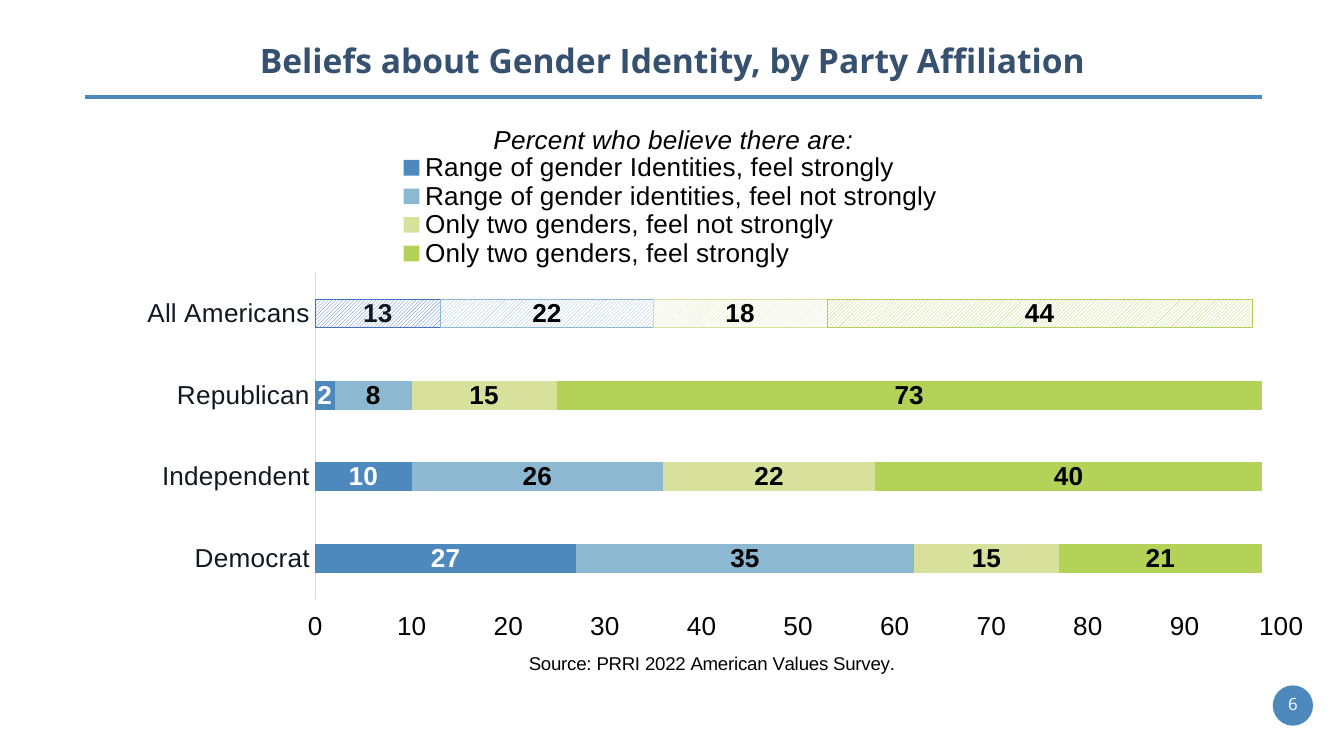
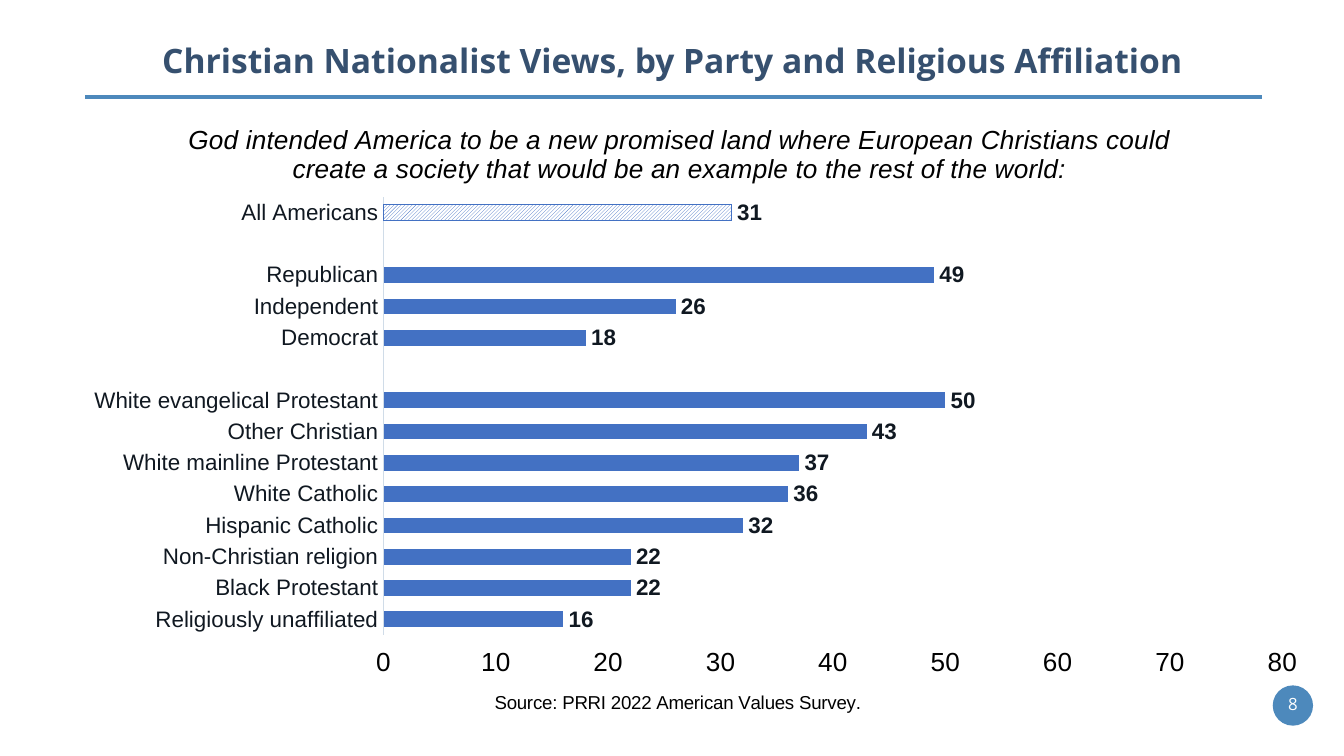
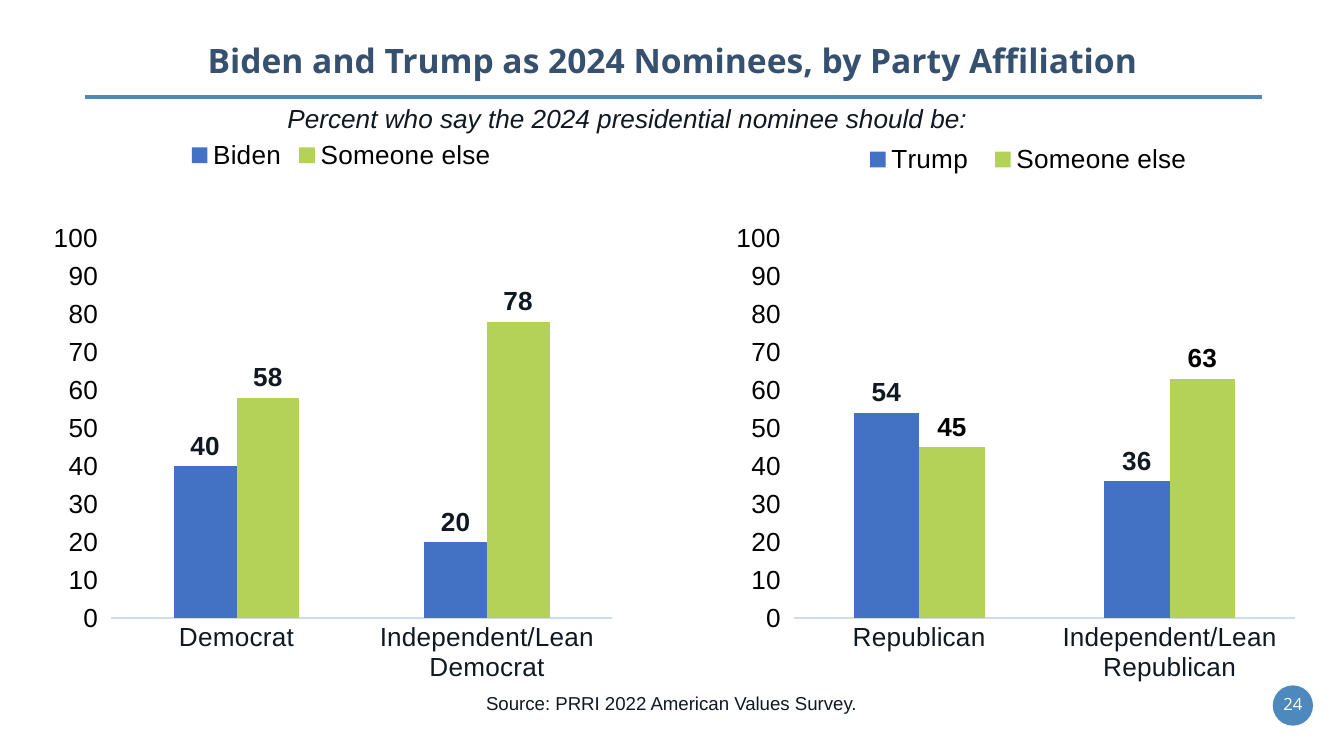
from pptx import Presentation
from pptx.chart.data import CategoryChartData
from pptx.dml.color import RGBColor
from pptx.enum.chart import (XL_CHART_TYPE, XL_LABEL_POSITION, XL_LEGEND_POSITION,
                             XL_TICK_LABEL_POSITION, XL_TICK_MARK)
from pptx.enum.dml import MSO_PATTERN
from pptx.enum.shapes import MSO_CONNECTOR, MSO_SHAPE
from pptx.enum.text import MSO_ANCHOR, MSO_AUTO_SIZE, PP_ALIGN
from pptx.oxml import parse_xml
from pptx.oxml.ns import nsdecls
from pptx.util import Inches, Pt

# Shared colours, fonts and wording
NAVY = RGBColor(0x36, 0x50, 0x6F)
STEEL = RGBColor(0x4D, 0x89, 0xBC)
SKY = RGBColor(0x8C, 0xB8, 0xD2)
ROYAL = RGBColor(0x43, 0x71, 0xC3)
PALE_LIME = RGBColor(0xD8, 0xE1, 0x9C)
LIME = RGBColor(0xB3, 0xD2, 0x57)
AXIS_GREY = RGBColor(0xD0, 0xDC, 0xE8)
INK = RGBColor(0x10, 0x18, 0x21)
BLACK = RGBColor(0, 0, 0)
WHITE = RGBColor(0xFF, 0xFF, 0xFF)
HEAD_FONT = "Open Sans"
BODY_FONT = "Arial"
SOURCE = "Source: PRRI 2022 American Values Survey."


def set_attrs(obj, values):
    for name, value in values.items():
        setattr(obj, name, value)


def set_font(font, size, color, **extra):
    set_attrs(font, {"name": BODY_FONT, "size": Pt(size), "bold": False, **extra})
    font.color.rgb = color


# Slide frame and text
def add_text(s, box, text, size, color, align=PP_ALIGN.CENTER, frame=None, **font):
    sp = s.shapes.add_textbox(*map(Inches, box))
    tf = sp.text_frame
    set_attrs(tf, {"word_wrap": True, **(frame or {})})
    p = tf.paragraphs[0]
    p.alignment = align
    r = p.add_run()
    r.text = text
    set_font(r.font, size, color, **font)


def add_frame(prs, title, number):
    """Add a slide with its title, rule and page badge."""
    s = prs.slides.add_slide(prs.slide_layouts[6])
    rule = s.shapes.add_connector(MSO_CONNECTOR.STRAIGHT, Inches(9.39), Inches(0.72),
                                  Inches(0.63), Inches(0.72))
    rule.line.color.rgb = STEEL
    rule.line.width = Pt(2)
    rule.element.spPr.append(parse_xml(f"<a:effectLst {nsdecls('a')}/>"))

    badge = s.shapes.add_shape(MSO_SHAPE.ROUNDED_RECTANGLE, Inches(9.47), Inches(5.1),
                               Inches(0.3), Inches(0.3))
    badge.adjustments[0] = 0.5
    badge.shadow.inherit = False
    badge.fill.solid()
    badge.fill.fore_color.rgb = STEEL
    badge.line.fill.background()

    middle = {"vertical_anchor": MSO_ANCHOR.MIDDLE, "margin_left": 0, "margin_right": 0}
    add_text(s, (9.54, 5.12, 0.16, 0.24), str(number), 9, WHITE, name=HEAD_FONT,
             frame={**middle, "word_wrap": False, "margin_top": 0, "margin_bottom": 0})
    add_text(s, (0.17, 0.27, 9.67, 0.35), title, 18, NAVY, name=HEAD_FONT, bold=True,
             frame={**middle, "margin_top": Inches(0.04), "margin_bottom": Inches(0.04)})
    return s


# Charts
def place(chart, xpath, *percents):
    """Fix a chart part at x, y and optionally w, h, in percent of the chart."""
    part = chart.element.xpath(xpath)[0]
    for old in part.xpath("c:layout"):
        part.remove(old)
    is_plot = xpath.endswith("plotArea")
    target = '<c:layoutTarget val="inner"/>' if is_plot else ""
    modes = '<c:xMode val="edge"/><c:yMode val="edge"/>'
    sizes = "".join(f'<c:{k} val="{v / 100:.3f}"/>' for k, v in zip("xywh", percents))
    layout = parse_xml(f"<c:layout {nsdecls('c')}><c:manualLayout>{target}{modes}{sizes}"
                       "</c:manualLayout></c:layout>")
    part.insert(0 if is_plot else 1, layout)


def add_bars(s, kind, box, cats, series, plot_box, gap, top=100, size=14):
    """Add a bar chart; series holds (name, values, fill, label colour)."""
    data = CategoryChartData()
    data.categories = cats
    for name, values, _, _ in series:
        data.add_series(name, values)
    chart = s.shapes.add_chart(kind, *map(Inches, box), data).chart
    set_font(chart.font, 14, BLACK)
    chart.has_title = False
    chart.has_legend = False
    stacked = kind == XL_CHART_TYPE.BAR_STACKED
    plot = chart.plots[0]
    set_attrs(plot, {"gap_width": gap, "vary_by_categories": False,
                     "overlap": 100 if stacked else 0})

    for ser, (_, _, fill, label_color) in zip(plot.series, series):
        ser.format.fill.solid()
        ser.format.fill.fore_color.rgb = fill
        labels = ser.data_labels
        set_font(labels.font, size, label_color, bold=True)
        set_attrs(labels, {"show_value": True,
                           "position": XL_LABEL_POSITION.CENTER if stacked
                           else XL_LABEL_POSITION.OUTSIDE_END})

    cat_axis, val_axis = chart.category_axis, chart.value_axis
    for axis in (cat_axis, val_axis):
        set_attrs(axis, {"major_tick_mark": XL_TICK_MARK.NONE,
                         "minor_tick_mark": XL_TICK_MARK.NONE,
                         "has_major_gridlines": False})
    set_font(cat_axis.tick_labels.font, size, INK)
    cat_axis.format.line.color.rgb = AXIS_GREY
    cat_axis.format.line.width = Pt(0.75)
    set_font(val_axis.tick_labels.font, 14, BLACK)
    val_axis.format.line.fill.background()
    set_attrs(val_axis, {"minimum_scale": 0, "maximum_scale": top, "major_unit": 10})
    if kind == XL_CHART_TYPE.COLUMN_CLUSTERED:
        val_axis.tick_label_position = XL_TICK_LABEL_POSITION.LOW
    else:
        # First category on top, scale below the bars
        cat_axis.reverse_order = True
        val_axis.tick_label_position = XL_TICK_LABEL_POSITION.HIGH
    place(chart, "c:chart/c:plotArea", *plot_box)
    return chart


def set_title(title, text, size, **font):
    p = title.text_frame.paragraphs[0]
    r = p.add_run()
    r.text = text
    set_font(r.font, size, BLACK, **font)


def add_question_and_source(chart, question, question_at, source_at):
    set_title(chart.chart_title, question, 14, italic=True)
    place(chart, "c:chart/c:title", *question_at)
    set_title(chart.value_axis.axis_title, SOURCE, 10)
    place(chart, "c:chart/c:plotArea/c:valAx/c:title", *source_at)


def add_legend(chart, position, box, overlay=False):
    chart.has_legend = True
    set_attrs(chart.legend, {"position": position, "include_in_layout": overlay})
    set_font(chart.legend.font, 14, BLACK)
    place(chart, "c:chart/c:legend", *box)


def hatch_first_bar(chart, colors):
    """Hatch the All Americans bar in each series."""
    for ser, color in zip(chart.plots[0].series, colors):
        fmt = ser.points[0].format
        fmt.fill.patterned()
        fmt.fill.pattern = MSO_PATTERN.DARK_UPWARD_DIAGONAL
        fmt.fill.fore_color.rgb = color
        fmt.fill.back_color.rgb = WHITE
        fmt.line.color.rgb = color


# Slides
def gender_slide(prs):
    s = add_frame(prs, "Beliefs about Gender Identity, by Party Affiliation", 6)
    series = [
        ("Range of gender Identities, feel strongly", (13, 2, 10, 27), STEEL, WHITE),
        ("Range of gender identities, feel not strongly", (22, 8, 26, 35), SKY, BLACK),
        ("Only two genders, feel not strongly", (18, 15, 22, 15), PALE_LIME, BLACK),
        ("Only two genders, feel strongly", (44, 73, 40, 21), LIME, BLACK),
    ]
    chart = add_bars(s, XL_CHART_TYPE.BAR_STACKED, (0.33, 0.81, 9.42, 4.25),
                     ("All Americans", "Republican", "Independent", "Democrat"),
                     series, (21.4, 28.9, 76.3, 57.5), gap=182)
    add_question_and_source(chart, "Percent who believe there are:",
                            (35.1, 1.6), (38, 95))
    add_legend(chart, XL_LEGEND_POSITION.TOP, (27.5, 7.8, 44, 20))
    hatch_first_bar(chart, (ROYAL, SKY, PALE_LIME, LIME))
    first_label = chart.plots[0].series[0].points[0].data_label
    set_font(first_label.font, 14, INK, bold=True)


def nationalism_slide(prs):
    s = add_frame(prs, "Christian Nationalist Views, by Party and Religious Affiliation", 8)
    groups = [
        [("All Americans", 31)],
        [("Republican", 49), ("Independent", 26), ("Democrat", 18)],
        [("White evangelical Protestant", 50), ("Other Christian", 43),
         ("White mainline Protestant", 37), ("White Catholic", 36),
         ("Hispanic Catholic", 32), ("Non-Christian religion", 22),
         ("Black Protestant", 22), ("Religiously unaffiliated", 16)],
    ]
    # An empty category separates the groups
    rows = groups[0][:]
    for group in groups[1:]:
        rows += [("", None)] + group
    cats, values = zip(*rows)
    chart = add_bars(s, XL_CHART_TYPE.BAR_CLUSTERED, (0.33, 0.81, 9.42, 4.54), cats,
                     [("Series 1", values, ROYAL, INK)],
                     (26.8, 14.5, 71, 72), gap=100, top=80, size=12)
    add_question_and_source(
        chart, "God intended America to be a new promised land where European Christians "
        "could create a society that would be an example to the rest of the world:",
        (11, 1.5), (35.3, 95))
    hatch_first_bar(chart, [ROYAL])


def nominees_slide(prs):
    s = add_frame(prs, "Biden and Trump as 2024 Nominees, by Party Affiliation", 24)
    grow = {"auto_size": MSO_AUTO_SIZE.SHAPE_TO_FIT_TEXT}
    add_text(s, (2.04, 0.71, 5.92, 0.34),
             "Percent who say the 2024 presidential nominee should be:", 14, INK,
             align=PP_ALIGN.LEFT, frame=grow, italic=True)
    add_text(s, (3.33, 5.1, 3.33, 0.27), SOURCE, 10, INK, frame=grow)
    panels = [
        (-0.08, "Democrat", "Biden", (40, 20), (58, 78), INK, 200,
         XL_LEGEND_POSITION.TOP, (27.4, 1.8, 45, 6), True),
        (5, "Republican", "Trump", (54, 36), (45, 63), BLACK, 182,
         XL_LEGEND_POSITION.BOTTOM, (25.5, 2.5, 50, 6), False),
    ]
    for left, party, nominee, own, other, color, gap, position, box, overlay in panels:
        chart = add_bars(s, XL_CHART_TYPE.COLUMN_CLUSTERED, (left, 0.94, 5.25, 4.5),
                         (party, f"Independent/Lean {party}"),
                         [(nominee, own, ROYAL, INK), ("Someone else", other, LIME, color)],
                         (17.3, 18.5, 71, 62.8), gap)
        add_legend(chart, position, box, overlay)


def main():
    prs = Presentation()
    prs.slide_width = Inches(10)
    prs.slide_height = prs.slide_width * 9 // 16
    gender_slide(prs)
    nationalism_slide(prs)
    nominees_slide(prs)
    prs.save("out.pptx")


if __name__ == "__main__":
    main()
